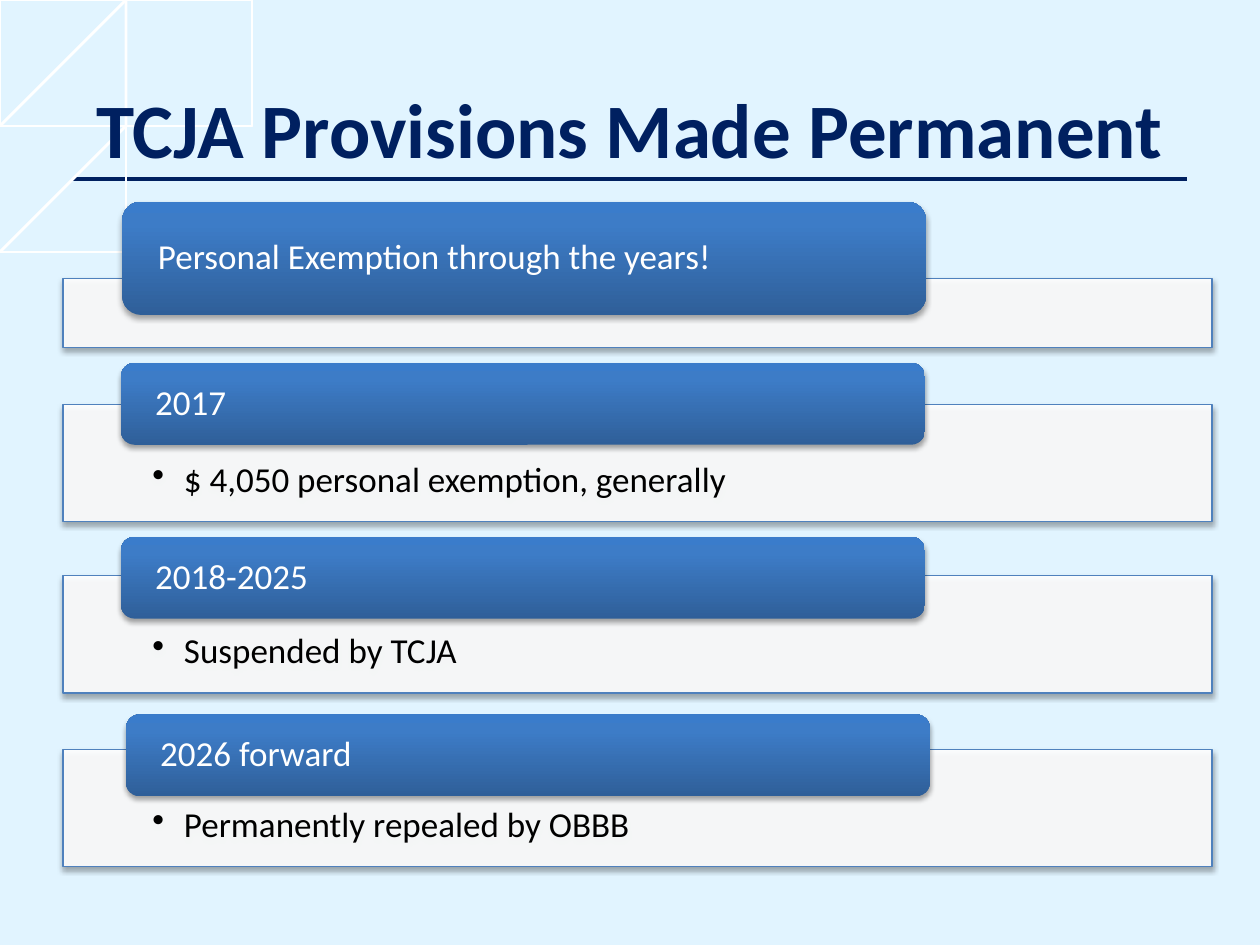
import math
from dataclasses import dataclass

import pptx
import pptx.util
from lxml import etree
from pptx.dml.color import RGBColor
from pptx.enum.shapes import MSO_CONNECTOR, MSO_SHAPE
from pptx.enum.text import MSO_ANCHOR, PP_ALIGN
from pptx.oxml import parse_xml
from pptx.oxml.ns import qn
from pptx.util import Inches, Pt

NS = 'xmlns:a="http://schemas.openxmlformats.org/drawingml/2006/main"'


@dataclass(frozen=True)
class Theme:
    font: str = "Calibri"
    background: str = "E1F4FF"
    navy: str = "002060"
    white: str = "FFFFFF"
    black: str = "000000"
    outline: str = "4F81BD"
    gradient: tuple = ((0, "2F5F99"), (80, "3D7CC7"), (100, "3A7CCB"))
    title_size: int = 44
    text_size: int = 20


THEME = Theme()
PANEL_LEFT, PANEL_WIDTH = 0.5, 9.12
HEADER_WIDTH = 6.38

# header text, header (left, top, height), panel (top, height), bullet
SECTIONS = [
    ("Personal Exemption through the years!", (0.97, 1.6, 0.9), (2.21, 0.55), None),
    ("2017", (0.96, 2.88, 0.65), (3.21, 0.93), "$ 4,050 personal exemption, generally"),
    ("2018-2025", (0.96, 4.26, 0.65), (4.57, 0.93), "Suspended by TCJA"),
    ("2026 forward", (1.0, 5.67, 0.65), (5.95, 0.93), "Permanently repealed by OBBB"),
]


def rgb(value):
    return RGBColor.from_string(value)


def add_soft_shadow(shape):
    shape.shadow.inherit = False
    effects = shape._element.spPr.find(qn("a:effectLst"))
    effects.append(parse_xml(
        f'<a:outerShdw {NS} blurRad="{Pt(3.1)}" dist="{Pt(1.8)}" dir="5400000" '
        'rotWithShape="0"><a:srgbClr val="000000"><a:alpha val="35000"/>'
        '</a:srgbClr></a:outerShdw>'))


def set_gradient(shape):
    """Fill with the three-stop header gradient, running upwards."""
    stops = "".join(f'<a:gs pos="{pos * 1000}"><a:srgbClr val="{color}"/></a:gs>'
                    for pos, color in THEME.gradient)
    shape.fill.background()
    no_fill = shape._element.spPr.find(qn("a:noFill"))
    no_fill.getparent().replace(no_fill, parse_xml(
        f'<a:gradFill {NS} rotWithShape="1"><a:gsLst>{stops}</a:gsLst>'
        '<a:lin ang="16200000" scaled="0"/></a:gradFill>'))


def set_text(shape, text, color, anchor, side, top=0, bottom=0):
    tf = shape.text_frame
    tf.word_wrap = True
    tf.vertical_anchor = anchor
    tf.margin_left = tf.margin_right = Inches(side)
    tf.margin_top, tf.margin_bottom = Inches(top), Inches(bottom)
    p = tf.paragraphs[0]
    p.text = text
    p.alignment = PP_ALIGN.LEFT
    p.line_spacing = 0.9
    p.font.name, p.font.size = THEME.font, Pt(THEME.text_size)
    p.font.color.rgb = rgb(color)
    return p


def add_bullet(p):
    pPr = p._p.get_or_add_pPr()
    pPr.set("marL", str(Inches(0.25)))
    pPr.set("indent", str(Inches(-0.25)))
    bullet = parse_xml(f'<a:buChar {NS} char="•"/>')
    pPr.find(qn("a:defRPr")).addprevious(bullet)


def add_panel(s, top, height, bullet):
    sp = s.shapes.add_shape(MSO_SHAPE.RECTANGLE, Inches(PANEL_LEFT), Inches(top),
                            Inches(PANEL_WIDTH), Inches(height))
    sp.fill.solid()
    sp.fill.fore_color.rgb = rgb(THEME.white)
    color = sp._element.spPr.find(qn("a:solidFill"))[0]
    etree.SubElement(color, qn("a:alpha")).set("val", "90000")
    sp.line.color.rgb = rgb(THEME.outline)
    sp.line.width = Pt(0.75)
    add_soft_shadow(sp)
    if bullet:
        add_bullet(set_text(sp, bullet, THEME.black, MSO_ANCHOR.TOP, 0.71, 0.46, 0.16))


def add_header(s, text, left, top, height):
    sp = s.shapes.add_shape(MSO_SHAPE.ROUNDED_RECTANGLE, Inches(left), Inches(top),
                            Inches(HEADER_WIDTH), Inches(height))
    set_gradient(sp)
    sp.line.fill.background()
    add_soft_shadow(sp)
    set_text(sp, text, THEME.white, MSO_ANCHOR.MIDDLE, 0.24)


def arc_points(bottom, center_y=-0.16, aspect=0.75, steps=10):
    """Points of an elliptical arc from the slide's top edge to its left edge."""
    ry = bottom - center_y
    start = math.asin(-center_y / ry)
    angles = [start + (math.pi / 2 - start) * i / steps for i in range(steps + 1)]
    return [(aspect * ry * math.cos(a), center_y + ry * math.sin(a)) for a in angles]


def add_corner_rings(s, count=17, outer=2.29, step=0.134):
    arcs = [arc_points(outer - i * step) for i in range(count)]
    builder = s.shapes.build_freeform(*arcs[0][0], scale=Inches(1))
    for arc in arcs:
        builder.move_to(*arc[0])
        builder.add_line_segments(arc[1:], close=False)
    sp = builder.convert_to_shape()
    sp.fill.background()
    sp.line.color.rgb = rgb(THEME.white)
    sp.line.width = Pt(1.6)
    sp.shadow.inherit = False


def add_title_rule(s):
    rule = s.shapes.add_connector(MSO_CONNECTOR.STRAIGHT, Inches(0.58), Inches(1.42),
                                  Inches(9.42), Inches(1.42))
    rule.line.color.rgb = rgb(THEME.navy)
    rule.line.width = Pt(2)
    etree.SubElement(rule._element.spPr, qn("a:effectLst"))


def set_title(s, text):
    """Fill the title placeholder and bring it in front of the decoration."""
    title = s.shapes.title
    title.left, title.top = Inches(0.5), Inches(0.58)
    title.width, title.height = Inches(9), Inches(0.87)
    title.text_frame.vertical_anchor = MSO_ANCHOR.MIDDLE
    p = title.text_frame.paragraphs[0]
    p.text = text
    p.alignment = PP_ALIGN.CENTER
    p.font.name, p.font.size, p.font.bold = THEME.font, Pt(THEME.title_size), True
    p.font.color.rgb = rgb(THEME.navy)
    s.shapes._spTree.append(title._element)


def main():
    prs = pptx.Presentation()
    prs.slide_width, prs.slide_height = Inches(10), Inches(7.5)
    s = prs.slides.add_slide(prs.slide_layouts[5])
    s.background.fill.solid()
    s.background.fill.fore_color.rgb = rgb(THEME.background)
    add_title_rule(s)
    add_corner_rings(s)
    set_title(s, "TCJA Provisions Made Permanent")
    for text, header, panel, bullet in SECTIONS:
        add_panel(s, *panel, bullet)
        add_header(s, text, *header)
    prs.save("out.pptx")


if __name__ == "__main__":
    main()
